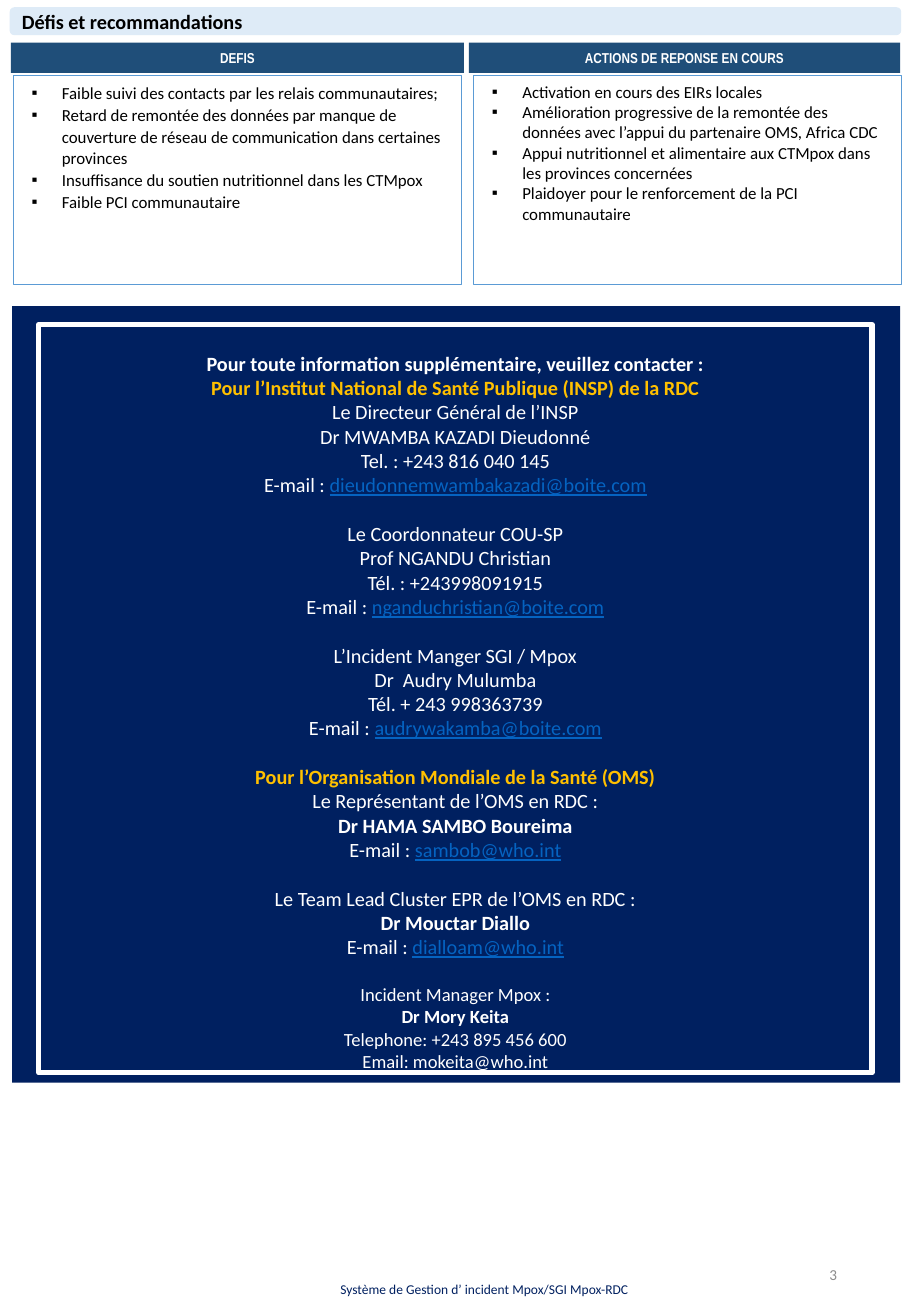
from lxml import etree
from pptx import Presentation
from pptx.dml.color import RGBColor
from pptx.enum.shapes import MSO_SHAPE
from pptx.enum.text import MSO_ANCHOR, MSO_AUTO_SIZE, PP_ALIGN
from pptx.oxml.ns import qn
from pptx.util import Inches, Pt

RECT, ROUNDED = MSO_SHAPE.RECTANGLE, MSO_SHAPE.ROUNDED_RECTANGLE
TOP, MIDDLE = MSO_ANCHOR.TOP, MSO_ANCHOR.MIDDLE
LEFT, CENTER, RIGHT = PP_ALIGN.LEFT, PP_ALIGN.CENTER, PP_ALIGN.RIGHT
WHITE, BLACK, NAVY, GOLD, LINK = "FFFFFF", "000000", "002060", "FFC000", "0563C1"
MAIL = "E-mail : "

prs = Presentation()
prs.slide_width, prs.slide_height = Inches(7.5), Inches(10.83)
slide = prs.slides.add_slide(prs.slide_layouts[3])
title, challenges, actions = slide.placeholders


def add_block(kind, left, top, width, height, fill=None, line=None, weight=0.75):
    block = slide.shapes.add_shape(
        kind, Inches(left), Inches(top), Inches(width), Inches(height))
    block.shadow.inherit = False
    if fill:
        block.fill.solid()
        block.fill.fore_color.rgb = RGBColor.from_string(fill)
    else:
        block.fill.background()
    if line:
        block.line.color.rgb = RGBColor.from_string(line)
        block.line.width = Pt(weight)
    else:
        block.line.fill.background()
    return block


def style(paragraph, size, color, bold=False, align=LEFT, font="Calibri"):
    paragraph.alignment = align
    paragraph.font.name = font
    paragraph.font.size = Pt(size)
    paragraph.font.bold = bold
    paragraph.font.color.rgb = RGBColor.from_string(color)


# Title on its rounded bar
title_bar = add_block(ROUNDED, 0.08, 0.06, 7.34, 0.23, fill="DEEBF7")
slide.shapes._spTree.insert(2, title_bar._element)
title.left, title.top = title_bar.left, title_bar.top
title.width, title.height = title_bar.width, title_bar.height
title.text_frame.text = "Défis et recommandations"
title.text_frame.auto_size = MSO_AUTO_SIZE.NONE
title.text_frame.vertical_anchor = MIDDLE
title.text_frame.margin_top = title.text_frame.margin_bottom = 0
style(title.text_frame.paragraphs[0], 12, BLACK, bold=True)

# Two columns: header, list, line spacing, items
columns = [
    ("DEFIS", 0.09, 3.73, challenges, 0.11, 3.69, 1.07, [
        "Faible suivi des contacts par les relais communautaires;",
        "Retard de remontée des données par manque de couverture de réseau "
        "de communication dans certaines provinces",
        "Insuffisance du soutien nutritionnel dans les CTMpox",
        "Faible PCI communautaire"]),
    ("ACTIONS DE REPONSE EN COURS", 3.86, 3.55, actions, 3.9, 3.52, 1.0, [
        "Activation en cours des EIRs locales",
        "Amélioration progressive de la remontée des données avec l’appui "
        "du partenaire OMS, Africa CDC",
        "Appui nutritionnel et alimentaire aux CTMpox dans les provinces concernées",
        "Plaidoyer pour le renforcement de la PCI communautaire"]),
]
for heading, head_left, head_width, body, left, width, spacing, items in columns:
    header = add_block(RECT, head_left, 0.35, head_width, 0.25, fill="1F4E79")
    header.text_frame.text = heading
    header.text_frame.vertical_anchor = MIDDLE
    style(header.text_frame.paragraphs[0], 8.5, WHITE, True, CENTER, "Arial Narrow")

    body.left, body.top = Inches(left), Inches(0.62)
    body.width, body.height = Inches(width), Inches(1.72)
    body.line.color.rgb = RGBColor.from_string("5B9BD5")
    body.line.width = Pt(0.75)
    body.text_frame.text = "\n".join(items)
    body.text_frame.auto_size = MSO_AUTO_SIZE.NONE
    body.text_frame.vertical_anchor = TOP
    for item in body.text_frame.paragraphs:
        item.line_spacing = spacing
        item.space_before = Pt(0)
        properties = item._p.get_or_add_pPr()
        properties.set("marL", str(Inches(0.3)))
        properties.set("indent", str(Inches(-0.25)))
        etree.SubElement(properties, qn("a:buChar")).set("char", "▪")
        style(item, 10, BLACK)

# Contact panel with its white frame
add_block(RECT, 0.1, 2.52, 7.31, 6.39, fill=NAVY)
contact_frame = add_block(RECT, 0.32, 2.67, 6.86, 6.16, line=WHITE, weight=3)
contacts = contact_frame.text_frame
contacts.word_wrap = True
contacts.vertical_anchor = TOP
contacts.margin_top = Inches(0.22)
contacts.margin_bottom = 0

# Contact groups: text size, lines
groups = [
    (12, ["Pour toute information supplémentaire, veuillez contacter :",
          "Pour l’Institut National de Santé Publique (INSP) de la RDC",
          "Le Directeur Général de l’INSP",
          "Dr MWAMBA KAZADI Dieudonné",
          "Tel. : +243 816 040 145",
          MAIL + "dieudonnemwambakazadi@boite.com"]),
    (12, ["Le Coordonnateur COU-SP",
          "Prof NGANDU Christian",
          "Tél. : +243998091915",
          MAIL + "nganduchristian@boite.com"]),
    (12, ["L’Incident Manger SGI / Mpox",
          "Dr  Audry Mulumba",
          "Tél. + 243 998363739",
          MAIL + "audrywakamba@boite.com"]),
    (12, ["Pour l’Organisation Mondiale de la Santé (OMS)",
          "Le Représentant de l’OMS en RDC :",
          "Dr HAMA SAMBO Boureima",
          MAIL + "sambob@who.int"]),
    (12, ["Le Team Lead Cluster EPR de l’OMS en RDC :",
          "Dr Mouctar Diallo",
          MAIL + "dialloam@who.int"]),
    (11, ["Incident Manager Mpox :",
          "Dr Mory Keita",
          "Telephone: +243 895 456 600",
          "Email: mokeita@who.int"]),
]
bold_starts = ("Pour ", "Dr HAMA", "Dr Mouctar", "Dr Mory")
gold_starts = ("Pour l’Institut", "Pour l’Organisation")
for group_number, (size, lines) in enumerate(groups):
    for line_number, text in enumerate(lines):
        first = group_number == line_number == 0
        entry = contacts.paragraphs[0] if first else contacts.add_paragraph()
        if line_number == 0 and not first:
            entry.space_before = Pt(14.4)
        style(entry, size, GOLD if text.startswith(gold_starts) else WHITE,
              text.startswith(bold_starts), CENTER)
        label, mail, address = text.partition(MAIL)
        entry.add_run().text = label + mail
        if address:
            email = entry.add_run()
            email.text = address
            email.font.underline = True
            email.font.color.rgb = RGBColor.from_string(LINK)

# Page number and footer
footers = [
    ("3", 6.7, 10.35, 0.29, 0.27, 9, "8C8C8C", RIGHT),
    ("Système de Gestion d’ incident Mpox/SGI Mpox-RDC",
     2.46, 10.48, 3.06, 0.26, 8, NAVY, CENTER),
]
for text, left, top, width, height, size, color, align in footers:
    footer = slide.shapes.add_textbox(
        Inches(left), Inches(top), Inches(width), Inches(height)).text_frame
    footer.word_wrap = True
    footer.vertical_anchor = MIDDLE
    footer.text = text
    style(footer.paragraphs[0], size, color, align=align)

prs.save("out.pptx")
